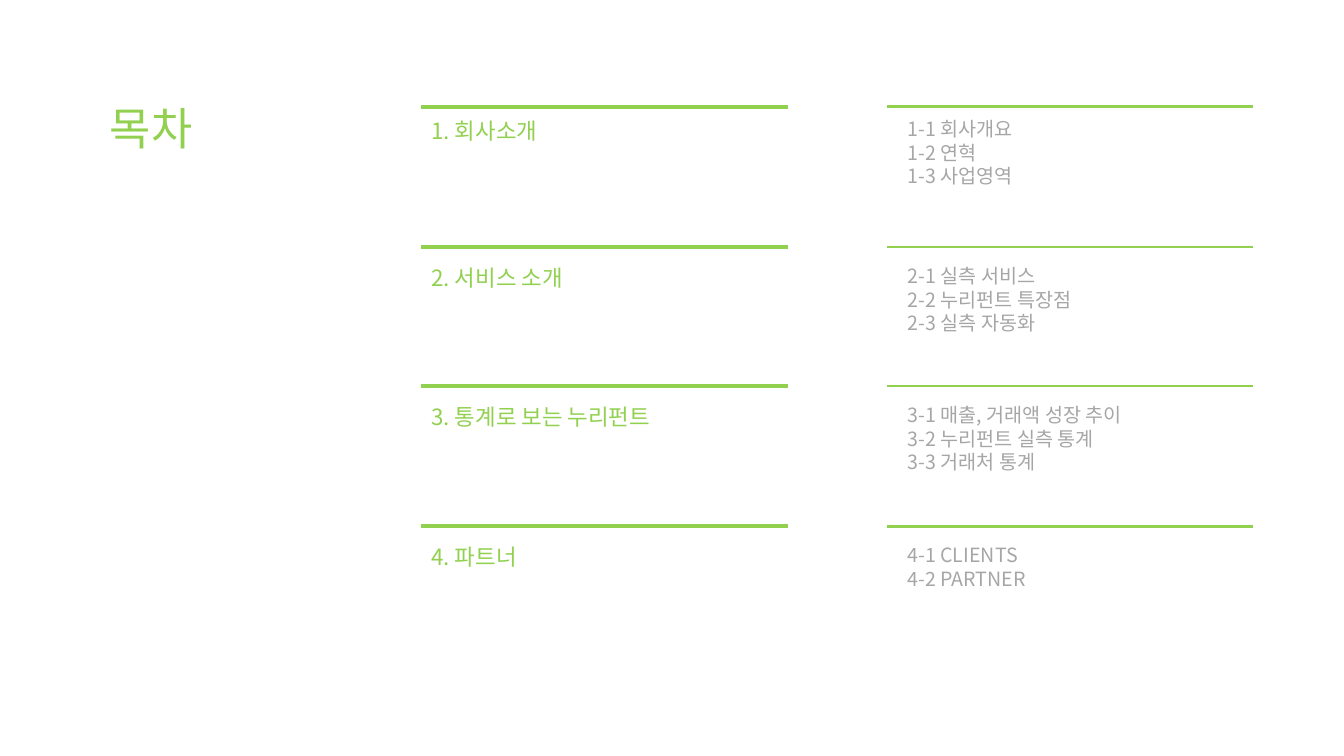
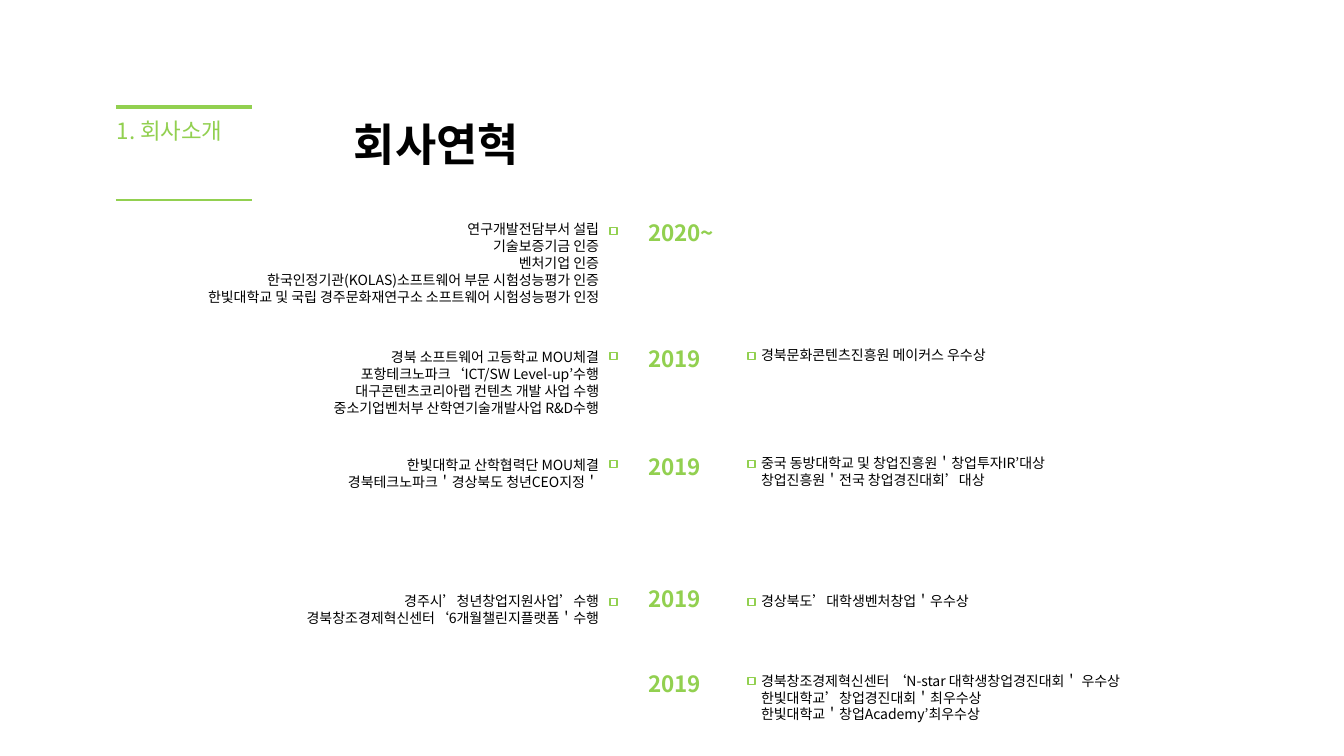
from dataclasses import dataclass

from lxml import etree
from pptx import Presentation
from pptx import util as u
from pptx.dml.color import RGBColor
from pptx.enum import shapes, text
from pptx.oxml import ns

# Shared look
PX = 9144  # EMU per px, 100 px to the inch
GREEN = RGBColor(0x92, 0xD0, 0x50)
GREY = RGBColor(0xA6, 0xA6, 0xA6)
BLACK = RGBColor(0, 0, 0)
FONT = "Noto Sans CJK KR"
COMPARISON_LAYOUT = 4  # one title and four body placeholders
LEFT, RIGHT = text.PP_ALIGN.LEFT, text.PP_ALIGN.RIGHT


@dataclass(frozen=True)
class Style:
    size: int
    color: RGBColor
    bold: bool = False
    align: text.PP_ALIGN = LEFT


CONTENTS_TITLE = Style(32, GREEN)
HISTORY_TITLE = Style(32, BLACK, bold=True)
CHAPTER = Style(16, GREEN)
SECTION = Style(14, GREY)
YEAR = Style(16, GREEN, bold=True)
EVENT_LEFT = Style(10, BLACK, align=RIGHT)
EVENT_RIGHT = Style(10, BLACK)


@dataclass(frozen=True)
class Chapter:
    heading: str
    sections: tuple[str, ...]
    section_rule: float  # line width in points


@dataclass(frozen=True)
class Period:
    year: str
    top: int
    marker_top: int
    left_top: int = 0
    left: tuple[str, ...] = ()
    right_top: int = 0
    right: tuple[str, ...] = ()


CHAPTERS = (
    Chapter("1. 회사소개", ("1-1 회사개요", "1-2 연혁", "1-3 사업영역"), 2.25),
    Chapter("2. 서비스 소개",
            ("2-1 실측 서비스", "2-2 누리펀트 특장점", "2-3 실측 자동화"), 1),
    Chapter("3. 통계로 보는 누리펀트",
            ("3-1 매출, 거래액 성장 추이", "3-2 누리펀트 실측 통계", "3-3 거래처 통계"), 1),
    Chapter("4. 파트너", ("4-1 CLIENTS", "4-2 PARTNER"), 2.25),
)

PERIODS = (
    Period("2020~", 213, 226, 214, (
        "연구개발전담부서 설립",
        "기술보증기금 인증",
        "벤처기업 인증",
        "한국인정기관(KOLAS)소프트웨어 부문 시험성능평가 인증",
        "한빛대학교 및 국립 경주문화재연구소 소프트웨어 시험성능평가 인정",
    )),
    Period("2019", 338, 350, 341, (
        "경북 소프트웨어 고등학교 MOU체결",
        "포항테크노파크‘ICT/SW Level-up’수행",
        "대구콘텐츠코리아랩 컨텐츠 개발 사업 수행",
        "중소기업벤처부 산학연기술개발사업 R&D수행",
    ), 339, ("경북문화콘텐츠진흥원 메이커스 우수상",)),
    Period("2019", 445, 457, 448, (
        "한빛대학교 산학협력단 MOU체결",
        "경북테크노파크＇경상북도 청년CEO지정＇",
    ), 446, (
        "중국 동방대학교 및 창업진흥원＇창업투자IR’대상",
        "창업진흥원＇전국 창업경진대회’대상",
    )),
    Period("2019", 576, 594, 583, (
        "경주시’청년창업지원사업’수행",
        "경북창조경제혁신센터‘6개월챌린지플랫폼＇수행",
    ), 583, ("경상북도’대학생벤처창업＇우수상",)),
    Period("2019", 660, 672, right_top=662, right=(
        "경북창조경제혁신센터 ‘N-star 대학생창업경진대회＇ 우수상",
        "한빛대학교’창업경진대회＇최우수상",
        "한빛대학교＇창업Academy’최우수상",
    )),
)


def px(length: int) -> int:
    return length * PX


def text_height(line_count: int, style: Style) -> int:
    return 10 + round(line_count * style.size * 1.68)


def write(shape, lines: tuple[str, ...], style: Style) -> None:
    """Fill a text shape with one plain paragraph per line."""
    frame = shape.text_frame
    frame.word_wrap = True
    frame.auto_size = text.MSO_AUTO_SIZE.SHAPE_TO_FIT_TEXT
    frame.vertical_anchor = text.MSO_ANCHOR.TOP
    for index, line in enumerate(lines):
        paragraph = frame.paragraphs[0] if index == 0 else frame.add_paragraph()
        paragraph.alignment = style.align
        paragraph.line_spacing = 1.0
        paragraph.space_before = paragraph.space_after = u.Pt(0)
        properties = paragraph._p.get_or_add_pPr()
        properties.set("marL", "0")
        properties.set("indent", "0")
        etree.SubElement(properties, ns.qn("a:buNone"))
        run = paragraph.add_run()
        run.text = line
        run.font.size = u.Pt(style.size)
        run.font.bold = style.bold
        run.font.color.rgb = style.color
        run.font.name = FONT
        east_asian = etree.SubElement(run._r.get_or_add_rPr(), ns.qn("a:ea"))
        east_asian.set("typeface", FONT)


def fill_placeholder(holder, left: int, top: int, width: int,
                     lines: tuple[str, ...], style: Style) -> None:
    holder.left, holder.top = px(left), px(top)
    holder.width, holder.height = px(width), px(text_height(len(lines), style))
    write(holder, lines, style)


def add_label(slide, left: int, top: int, width: int,
              lines: tuple[str, ...], style: Style) -> None:
    height = text_height(len(lines), style)
    label = slide.shapes.add_textbox(px(left), px(top), px(width), px(height))
    write(label, lines, style)


def add_rule(slide, left: int, right: int, y: int, weight: float) -> None:
    rule = slide.shapes.add_connector(
        shapes.MSO_CONNECTOR.STRAIGHT, px(left), px(y), px(right), px(y))
    rule.line.color.rgb = GREEN
    rule.line.width = u.Pt(weight)
    etree.SubElement(rule._element.spPr, ns.qn("a:effectLst"))


def add_marker(slide, left: int, top: int) -> None:
    marker = slide.shapes.add_shape(
        shapes.MSO_SHAPE.RECTANGLE, px(left), px(top), px(7), px(7))
    marker.shadow.inherit = False
    marker.fill.background()
    marker.line.color.rgb = GREEN
    marker.line.width = u.Pt(1)


def add_slide(deck, title: str, left: int, top: int, style: Style):
    """Add a slide with its title placed; return it with its list placeholders."""
    slide = deck.slides.add_slide(deck.slide_layouts[COMPARISON_LAYOUT])
    title_holder, *list_holders = slide.placeholders
    fill_placeholder(title_holder, left, top, 212, (title,), style)
    return slide, list_holders


def build_contents(deck) -> None:
    slide, section_holders = add_slide(deck, "목차", 99, 95, CONTENTS_TITLE)
    for index, (chapter, holder) in enumerate(zip(CHAPTERS, section_holders)):
        rule_y = 106 + round(index * 138.67)
        text_top = rule_y + (12 if index else 5)
        add_rule(slide, 418, 782, rule_y, 3)
        add_label(slide, 418, text_top, 300, (chapter.heading,), CHAPTER)
        add_rule(slide, 880, 1243, rule_y, chapter.section_rule)
        fill_placeholder(holder, 890, text_top, 300, chapter.sections, SECTION)


def build_history(deck) -> None:
    slide, event_holders = add_slide(deck, "회사연혁", 341, 111, HISTORY_TITLE)

    # Chapter tag
    add_rule(slide, 115, 250, 106, 3)
    add_label(slide, 106, 111, 150, (CHAPTERS[0].heading,), CHAPTER)
    add_rule(slide, 115, 250, 198, 1.5)

    # Timeline
    free_holders = iter(event_holders)
    for period in PERIODS:
        add_label(slide, 633, period.top, 100, (period.year,), YEAR)
        if period.left:
            fill_placeholder(next(free_holders), 144, period.left_top, 460,
                             period.left, EVENT_LEFT)
            add_marker(slide, 605, period.marker_top)
        if period.right:
            add_label(slide, 745, period.right_top, 420, period.right, EVENT_RIGHT)
            add_marker(slide, 742, period.marker_top)


def main() -> None:
    deck = Presentation()
    deck.slide_width, deck.slide_height = px(1333), px(750)
    build_contents(deck)
    build_history(deck)
    deck.save("out.pptx")


if __name__ == "__main__":
    main()
